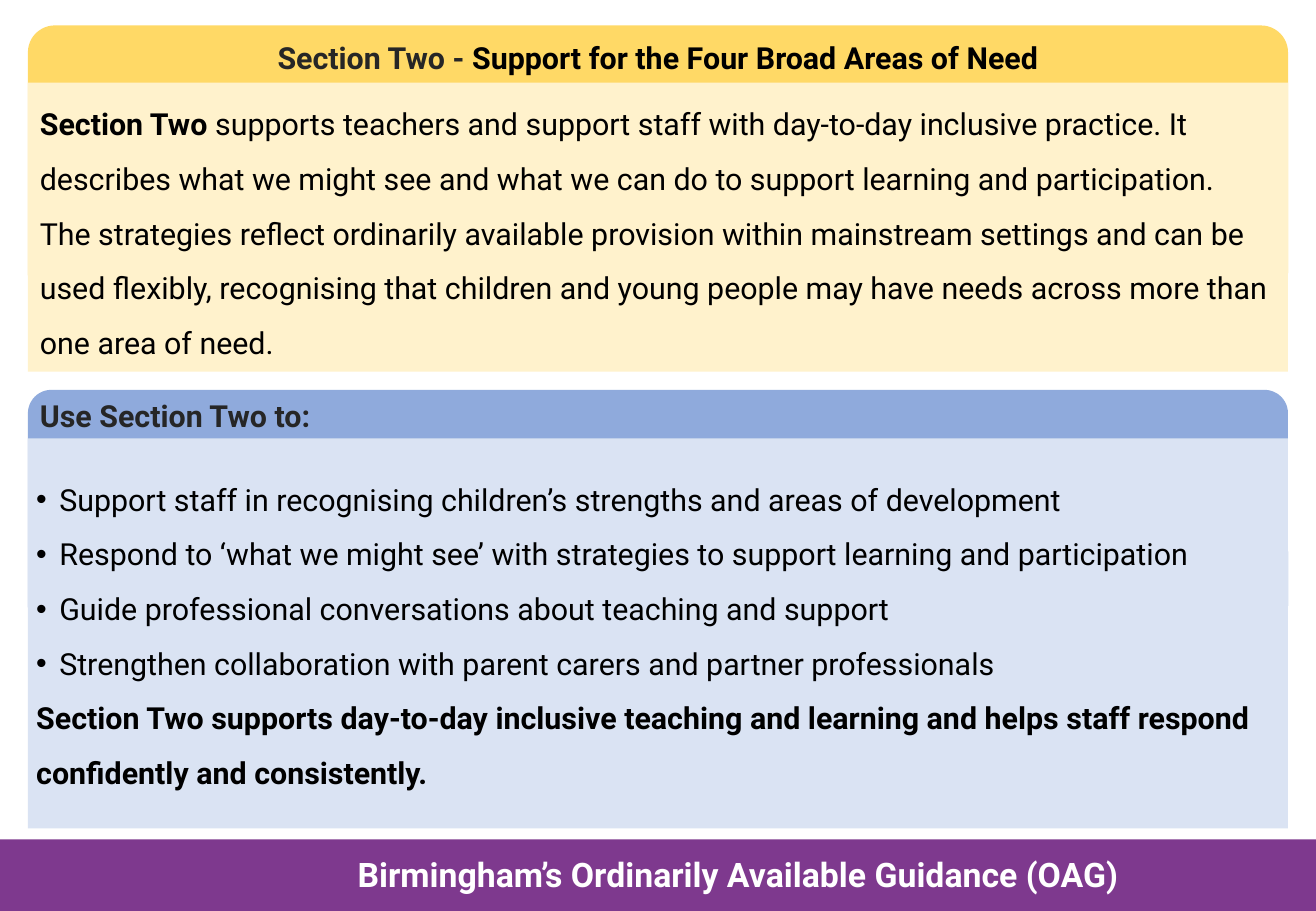
from pptx import Presentation
from pptx.dml.color import RGBColor
from pptx.enum.shapes import MSO_SHAPE
from pptx.enum.text import MSO_ANCHOR, MSO_AUTO_SIZE, PP_ALIGN
from pptx.oxml.ns import qn
from pptx.util import Pt
from lxml import etree

PX = 9144
FONT = "Roboto"
TITLE_ONLY = 5
RECT, ROUNDED = MSO_SHAPE.RECTANGLE, MSO_SHAPE.ROUNDED_RECTANGLE
TOP, MIDDLE = MSO_ANCHOR.TOP, MSO_ANCHOR.MIDDLE
LEFT, CENTER = PP_ALIGN.LEFT, PP_ALIGN.CENTER
NO_FIT = MSO_AUTO_SIZE.NONE

BLACK = RGBColor(0x00, 0x00, 0x00)
CHARCOAL = RGBColor(0x26, 0x26, 0x26)
WHITE = RGBColor(0xFF, 0xFF, 0xFF)
PURPLE = RGBColor(0x7E, 0x39, 0x8E)
GOLD = RGBColor(0xFF, 0xD9, 0x66)
CREAM = RGBColor(0xFF, 0xF2, 0xCC)
BLUE = RGBColor(0x8F, 0xAA, 0xDC)
PALE_BLUE = RGBColor(0xDA, 0xE3, 0xF3)

TITLE = [("Section Two - ", True, CHARCOAL),
         ("Support for the Four Broad Areas of Need", True, BLACK)]
INTRO = [
    [("Section Two ", True, BLACK),
     ("supports teachers and support staff with day-to-day inclusive practice. "
      "It describes what we might see and what we can do to support learning "
      "and participation.", False, BLACK)],
    [("The strategies reflect ordinarily available provision within mainstream "
      "settings and can be used flexibly, recognising that children and young "
      "people may have needs across more than one area of need.", False, BLACK)],
]
USES_HEADING = [("Use Section Two to:", True, CHARCOAL)]
USES = [
    "Support staff in recognising children’s strengths and areas of development",
    "Respond to ‘what we might see’ with strategies to support learning and participation",
    "Guide professional conversations about teaching and support",
    "Strengthen collaboration with parent carers and partner professionals",
]
SUMMARY = [("Section Two supports day-to-day inclusive teaching and learning and "
            "helps staff respond confidently and consistently.", True, BLACK)]
FOOTER = [("Birmingham’s Ordinarily Available Guidance (OAG)", True, WHITE)]


def add_block(page, kind, left, top, width, height, color, rounding=None):
    """Add a plain filled shape without outline or shadow."""
    block = page.shapes.add_shape(kind, left * PX, top * PX, width * PX, height * PX)
    block.shadow.inherit = False
    block.fill.solid()
    block.fill.fore_color.rgb = color
    block.line.fill.background()
    if rounding is not None:
        block.adjustments[0] = rounding


def add_text_box(page, left, top, width, height):
    """Add an empty text box."""
    return page.shapes.add_textbox(left * PX, top * PX, width * PX, height * PX)


def add_bullet(para, indent):
    """Give a paragraph a round bullet with a hanging indent."""
    properties = para._p.get_or_add_pPr()
    properties.set("marL", str(indent * PX))
    properties.set("indent", str(-indent * PX))
    etree.SubElement(properties, qn("a:buFont"), typeface="Arial")
    etree.SubElement(properties, qn("a:buChar"), char="•")


def write(box, paragraphs, size=18, align=LEFT, spacing=1.0, anchor=TOP, bullets=0):
    """Write paragraphs of (text, bold, color) runs, the first ones bulleted."""
    frame = box.text_frame
    frame.word_wrap = True
    frame.auto_size = NO_FIT
    frame.vertical_anchor = anchor
    for index, spans in enumerate(paragraphs):
        para = frame.add_paragraph() if index else frame.paragraphs[0]
        if index < bullets:
            add_bullet(para, 19)
        para.alignment = align
        para.line_spacing = spacing
        for text, bold, color in spans:
            span = para.add_run()
            span.text = text
            span.font.name = FONT
            span.font.size = Pt(size)
            span.font.bold = bold
            span.font.color.rgb = color


def add_intro(page, left, top, width):
    """Build the yellow panel with the slide title and introduction."""
    add_block(page, ROUNDED, left, top, width, 226, GOLD, 0.098)
    add_block(page, RECT, left, top + 47, width, 238, CREAM)
    title = page.shapes.title
    title.left, title.top = left * PX, (top + 6) * PX
    title.width, title.height = width * PX, 40 * PX
    page.shapes._spTree.append(title._element)
    write(title, [TITLE], align=CENTER)
    write(add_text_box(page, left, top + 46, width, 232), INTRO, spacing=1.5)


def add_uses(page, left, top, width):
    """Build the blue panel with the list of uses and the summary."""
    add_block(page, ROUNDED, left, top, width, 197, BLUE, 0.098)
    add_block(page, RECT, left, top + 40, width, 321, PALE_BLUE)
    write(add_text_box(page, left, top + 1, width, 40), [USES_HEADING])
    items = [[(text, False, BLACK)] for text in USES]
    write(add_text_box(page, left - 3, top + 50, width, 290), items + [SUMMARY],
          spacing=1.5, anchor=MIDDLE, bullets=len(USES))


def add_footer(page, left, top, width):
    """Build the purple band with the name of the guidance."""
    add_block(page, RECT, left, top, width, 59, PURPLE)
    write(add_text_box(page, left + 171, top + 7, 881, 44), [FOOTER], size=20, align=CENTER)


def main():
    """Build and save the slide."""
    deck = Presentation()
    deck.slide_width, deck.slide_height = 1083 * PX, 750 * PX
    page = deck.slides.add_slide(deck.slide_layouts[TITLE_ONLY])
    add_footer(page, -4, 691, 1092)
    add_intro(page, 23, 21, 1037)
    add_uses(page, 23, 321, 1037)
    deck.save("out.pptx")


if __name__ == "__main__":
    main()
